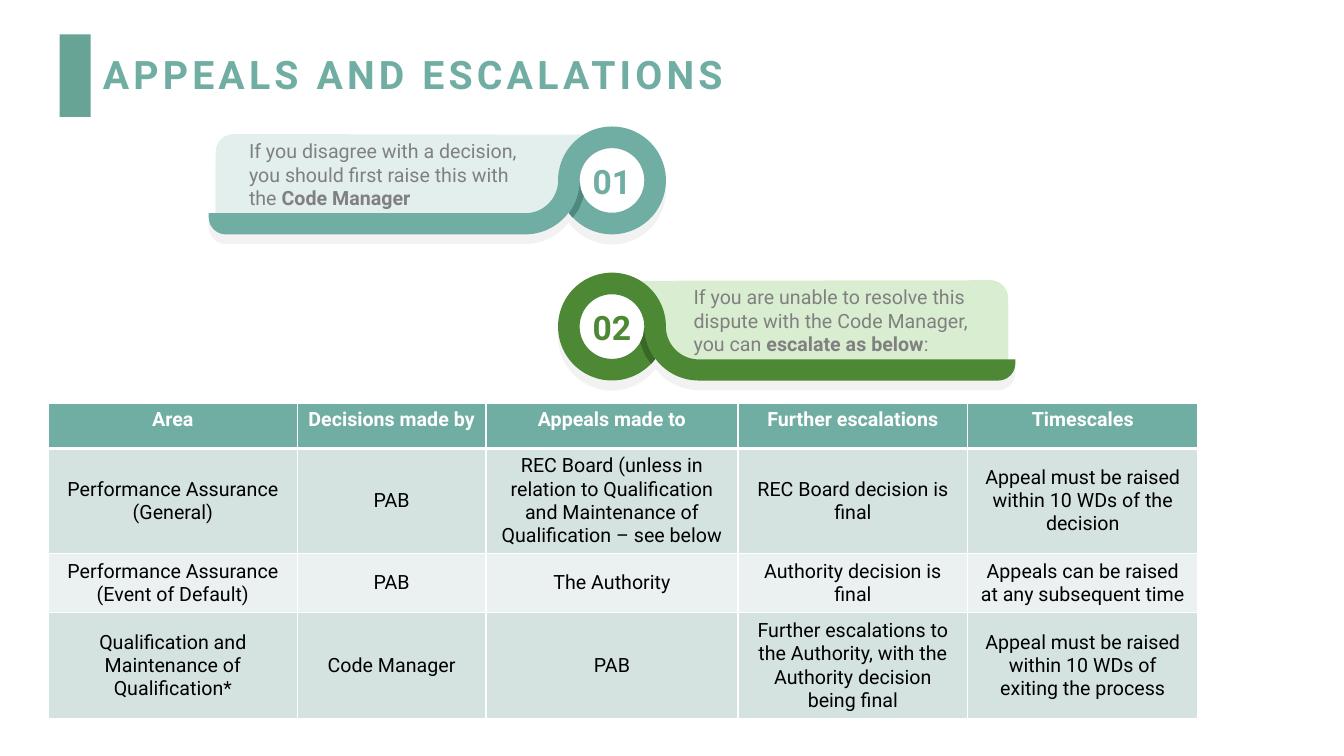
import math
from dataclasses import dataclass

import lxml.etree
import pptx
import pptx.dml.color
import pptx.enum.shapes
import pptx.enum.text
import pptx.oxml.ns
import pptx.util

PX = 9144  # EMU in one px, 100 px to the inch
KIND = pptx.enum.shapes.MSO_SHAPE
ALIGN = pptx.enum.text.PP_ALIGN
ANCHOR = pptx.enum.text.MSO_ANCHOR
FIT = pptx.enum.text.MSO_AUTO_SIZE
Point = tuple[float, float]


@dataclass(frozen=True)
class Theme:
    font: str = "Roboto"
    teal: str = "70ADA3"
    mark: str = "68A495"
    green: str = "4D8934"
    white: str = "FFFFFF"
    black: str = "000000"
    grey: str = "808080"
    shade: str = "F2F2F2"
    bands: tuple[str, str] = ("D5E3E0", "EBF1F0")
    title: int = 28
    count: int = 24
    body: int = 14


@dataclass(frozen=True)
class Banner:
    label: str
    text: str  # bars enclose the bold part
    y: int  # centre of the ring
    side: int  # 1 points right, -1 points left
    left: int  # left edge of the text
    main: str
    pale: str
    dark: str


THEME = Theme()
MID = 607  # x of both ring centres
BANNERS = (
    Banner("02", "If you are unable to resolve this dispute with the Code Manager, "
           "you can |escalate as below|:", 324, 1, 688, THEME.green, "D9EDD0", "3A6727"),
    Banner("01", "If you disagree with a decision, you should first raise this with "
           "the |Code Manager|", 179, -1, 247, THEME.teal, "E2EFED", "4E887E"),
)
COLS = (247, 187, 250, 228, 228)
ROWS = (45, 104, 59, 105)
CELLS = (
    ("Area", "Decisions made by", "Appeals made to", "Further escalations", "Timescales"),
    ("Performance Assurance (General)", "PAB",
     "REC Board (unless in relation to Qualification and Maintenance of Qualification – see below",
     "REC Board decision is final", "Appeal must be raised within 10 WDs of the decision"),
    ("Performance Assurance (Event of Default)", "PAB", "The Authority",
     "Authority decision is final", "Appeals can be raised at any subsequent time"),
    ("Qualification and Maintenance of Qualification*", "Code Manager", "PAB",
     "Further escalations to the Authority, with the Authority decision being final",
     "Appeal must be raised within 10 WDs of exiting the process"),
)


def px(*sizes: float) -> list[int]:
    return [round(size * PX) for size in sizes]


def tint(name: str) -> pptx.dml.color.RGBColor:
    return pptx.dml.color.RGBColor.from_string(name)


def write(frame, text: str, *, size: int, color: str, bold: bool = False,
          align=ALIGN.LEFT, anchor=ANCHOR.TOP, inset: int | None = None,
          space: int = 0, line: float = 1.0, track: int = 0) -> None:
    """Fill a text frame; each bar in the text toggles bold."""
    frame.word_wrap = True
    frame.vertical_anchor = anchor
    if inset is not None:
        frame.margin_left = frame.margin_right = inset
        frame.margin_top = frame.margin_bottom = inset
    para = frame.paragraphs[0]
    para.alignment = align
    para.line_spacing = line
    para.space_after = pptx.util.Pt(space)
    for turn, part in enumerate(text.split("|")):
        run = para.add_run()
        run.text = part
        run.font.name = THEME.font
        run.font.size = pptx.util.Pt(size)
        run.font.bold = bold != (turn % 2 == 1)
        run.font.color.rgb = tint(color)
        if track:
            run.font._element.set("spc", str(track * 100))


def paint(shape, color: str):
    shape.shadow.inherit = False
    shape.fill.solid()
    shape.fill.fore_color.rgb = tint(color)
    shape.line.fill.background()
    return shape


def place(shapes, kind, box: tuple[float, ...], color: str):
    return paint(shapes.add_shape(kind, *px(*box)), color)


def arc(x: float, y: float, r: float, start: int, end: int) -> list[Point]:
    """Points on a circle, by clockwise degrees from the right."""
    count = max(2, abs(end - start) // 4)
    turns = (math.radians(start + (end - start) * i / count) for i in range(count + 1))
    return [(x + r * math.cos(a), y + r * math.sin(a)) for a in turns]


def trace(shapes, item: Banner, dots: list[Point], color: str) -> None:
    ends = [tuple(px(MID + item.side * x, item.y + y)) for x, y in dots]
    form = shapes.build_freeform(*ends[0], scale=1.0)
    form.add_line_segments(ends[1:], close=True)
    paint(form.convert_to_shape(), color)


def ribbon(slide, item: Banner) -> None:
    shapes = slide.shapes.add_group_shape().shapes
    # Shadow
    trace(shapes, item, [
        *arc(0, 10, 53.5, 36, 302), *arc(375, -18, 18, -90, 0), (393, 41), (400, 41),
        *arc(383, 46, 17, 0, 90), *arc(86, 9, 54, 90, 143)], THEME.shade)
    # Number disc
    disc = place(shapes, KIND.OVAL, (MID - 32, item.y - 32, 64, 65), THEME.white)
    write(disc.text_frame, item.label, size=THEME.count, color=item.main, bold=True,
          align=ALIGN.CENTER, anchor=ANCHOR.MIDDLE, inset=0)
    # Pale panel
    trace(shapes, item, [
        *arc(375, -28, 18, -90, 0), (393, 39), (86, 39), *arc(86, 0, 32.5, 90, 180),
        *arc(0, 0, 53.5, 0, -58)], item.pale)
    # Ring, fold and bar
    ring = place(shapes, KIND.DONUT, (MID - 53.5, item.y - 53.5, 107, 107), item.main)
    ring.adjustments[0] = 0.2
    trace(shapes, item, [*arc(86, 0, 54, 180, 143), (39, 37), (33, 29), (28, 16), (31, 9)],
          item.dark)
    trace(shapes, item, [
        *arc(86, 0, 53.5, 180, 90), *arc(383, 36.5, 17, 90, 0), (400, 32.5),
        *arc(86, 0, 32.5, 90, 180)], item.main)
    # Message
    note = slide.shapes.add_textbox(*px(item.left, item.y - 41, 290, 71)).text_frame
    write(note, item.text, size=THEME.body, color=THEME.grey, inset=0, space=12)
    note.auto_size = FIT.SHAPE_TO_FIT_TEXT


def edge(cell, side: str, width: int) -> None:
    name = pptx.oxml.ns.qn
    line = lxml.etree.SubElement(cell._tc.get_or_add_tcPr(), name(f"a:ln{side}"),
                                 w=str(pptx.util.Pt(width)))
    fill = lxml.etree.SubElement(line, name("a:solidFill"))
    lxml.etree.SubElement(fill, name("a:srgbClr"), val=THEME.white)


def grid(slide) -> None:
    box = px(48, 400, sum(COLS), sum(ROWS))
    table = slide.shapes.add_table(len(ROWS), len(COLS), *box).table
    table.horz_banding = False
    for col, width in zip(table.columns, COLS):
        col.width = width * PX
    for r, (row, high) in enumerate(zip(table.rows, ROWS)):
        row.height = high * PX
        head = r == 0
        for cell, text in zip(row.cells, CELLS[r]):
            for side in "LRTB":
                edge(cell, side, 3 if (head and side == "B") or (r == 1 and side == "T") else 1)
            cell.fill.solid()
            cell.fill.fore_color.rgb = tint(THEME.teal if head else THEME.bands[(r - 1) % 2])
            write(cell.text_frame, text, size=THEME.body, bold=head, align=ALIGN.CENTER,
                  color=THEME.white if head else THEME.black)
            cell.vertical_anchor = ANCHOR.TOP if head else ANCHOR.MIDDLE


def main() -> None:
    deck = pptx.Presentation()
    deck.slide_width, deck.slide_height = px(1333, 750)
    slide = deck.slides.add_slide(deck.slide_layouts[5])
    # Heading
    place(slide.shapes, KIND.RECTANGLE, (59, 34, 31, 82), THEME.mark)
    title = slide.shapes.title
    title.left, title.top, title.width, title.height = px(92, 40, 1015, 72)
    write(title.text_frame, "APPEALS AND ESCALATIONS", size=THEME.title, color=THEME.teal,
          bold=True, anchor=ANCHOR.MIDDLE, line=0.9, track=3)
    title.text_frame.auto_size = FIT.NONE
    # Steps and routes
    for item in BANNERS:
        ribbon(slide, item)
    grid(slide)
    deck.save("out.pptx")


if __name__ == "__main__":
    main()
